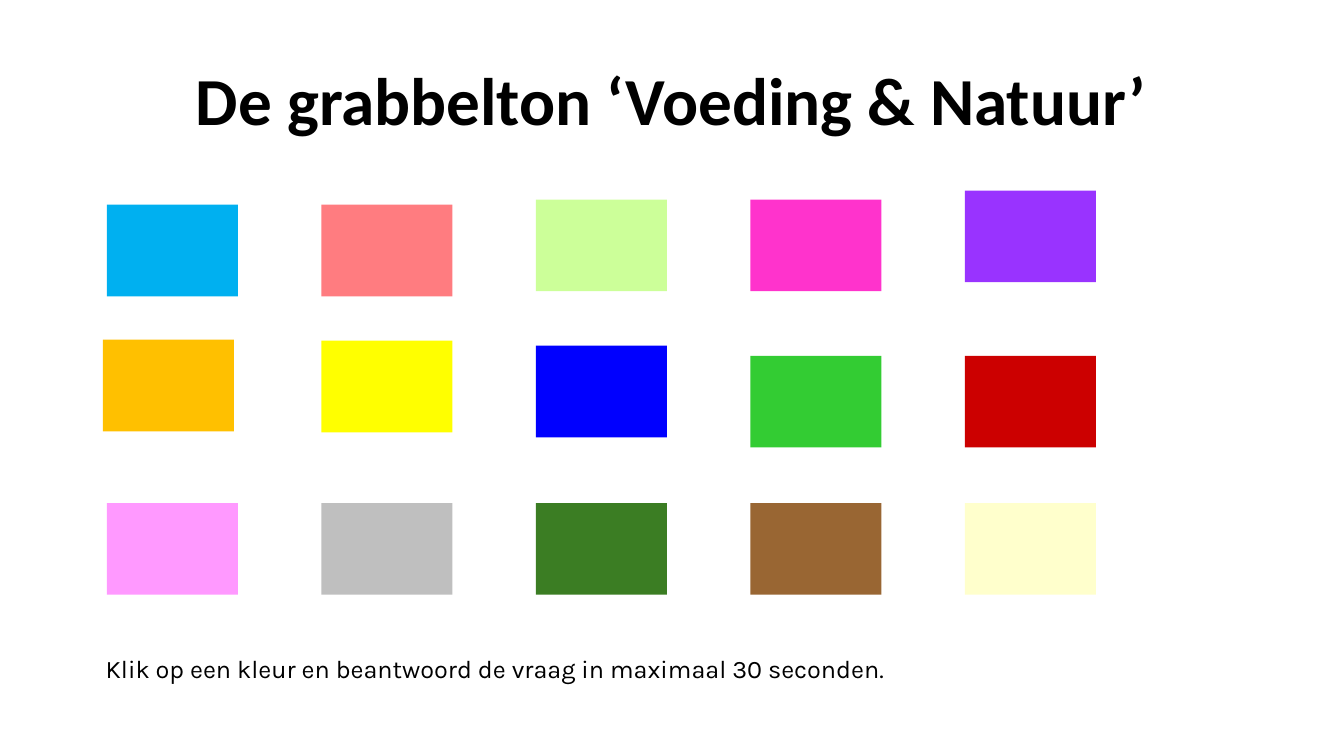
import pptx
import pptx.util
import pptx.dml.color
import pptx.enum.shapes
import pptx.enum.text

WIDTH, HEIGHT = 13.33, 7.5
COLORS = {
    "white": "FFFFFF", "black": "000000",
    "sky": "00B0F0", "salmon": "FF7C80", "lime": "CCFF99", "magenta": "FF33CC", "purple": "9933FF",
    "orange": "FFC000", "yellow": "FFFF00", "blue": "0000FF", "green": "33CC33", "red": "CC0000",
    "pink": "FF99FF", "grey": "BFBFBF", "forest": "3B7D23", "brown": "996633", "cream": "FFFFCC",
}
CARD_ROWS = [
    [("sky", 0, 0.14), ("salmon", 0, 0.14), ("lime", 0, 0.09), ("magenta", 0, 0.09), ("purple", 0, 0)],
    [("orange", -0.04, -0.07), ("yellow", 0, -0.06), ("blue", 0, -0.01), ("green", 0, 0.09), ("red", 0, 0.09)],
    [("pink", 0, 0), ("grey", 0, 0), ("forest", 0, 0), ("brown", 0, 0), ("cream", 0, 0)],
]


def color(name):
    """Return the named colour of the palette."""
    return pptx.dml.color.RGBColor.from_string(COLORS[name])


def add_text(slide, text, box, size, font, bold=False, align="LEFT"):
    """Add one line of formatted text in a box given in inches."""
    shape = slide.shapes.add_textbox(*map(pptx.util.Inches, box))
    frame = shape.text_frame
    frame.word_wrap = True
    frame.auto_size = pptx.enum.text.MSO_AUTO_SIZE.SHAPE_TO_FIT_TEXT
    paragraph = frame.paragraphs[0]
    paragraph.alignment = getattr(pptx.enum.text.PP_ALIGN, align)
    run = paragraph.add_run()
    run.text = text
    run.font.size = pptx.util.Pt(size)
    run.font.name = font
    run.font.bold = bold
    run.font.color.rgb = color("black")


def add_card(slide, name, box):
    """Add one plain coloured card in a box given in inches."""
    shape = slide.shapes.add_shape(
        pptx.enum.shapes.MSO_SHAPE.RECTANGLE, *map(pptx.util.Inches, box))
    shape.shadow.inherit = False
    shape.fill.solid()
    shape.fill.fore_color.rgb = color(name)
    shape.line.fill.background()


def add_card_grid(slide, box):
    """Lay out the loosely placed cards on a grid inside the box."""
    left, top, width, height = box
    card_width, card_height = 1.3, 0.91
    column_step = (width - card_width) / (len(CARD_ROWS[0]) - 1)
    row_step = (height - card_height) / (len(CARD_ROWS) - 1)
    for row, cards in enumerate(CARD_ROWS):
        for column, (name, shift_x, shift_y) in enumerate(cards):
            x = left + column * column_step + shift_x
            y = top + row * row_step + shift_y
            add_card(slide, name, (x, y, card_width, card_height))


def build_game_slide(presentation):
    """Build the slide with its title, colour cards and instruction."""
    slide = presentation.slides.add_slide(presentation.slide_layouts[6])
    slide.background.fill.solid()
    slide.background.fill.fore_color.rgb = color("white")
    add_text(slide, "De grabbelton ‘Voeding & Natuur’", (0.51, 0.53, 12.3, 0.91),
             size=48, font="Calibri", bold=True, align="CENTER")
    add_card_grid(slide, (1.06, 1.89, 9.81, 4.01))
    add_text(slide, "Klik op een kleur en beantwoord de vraag in maximaal 30 seconden.",
             (0.95, 6.43, 11.33, 0.4), size=18, font="Karla")


def main():
    """Create and save the presentation."""
    presentation = pptx.Presentation()
    presentation.slide_width = pptx.util.Inches(WIDTH)
    presentation.slide_height = pptx.util.Inches(HEIGHT)
    build_game_slide(presentation)
    presentation.save("out.pptx")


if __name__ == "__main__":
    main()
